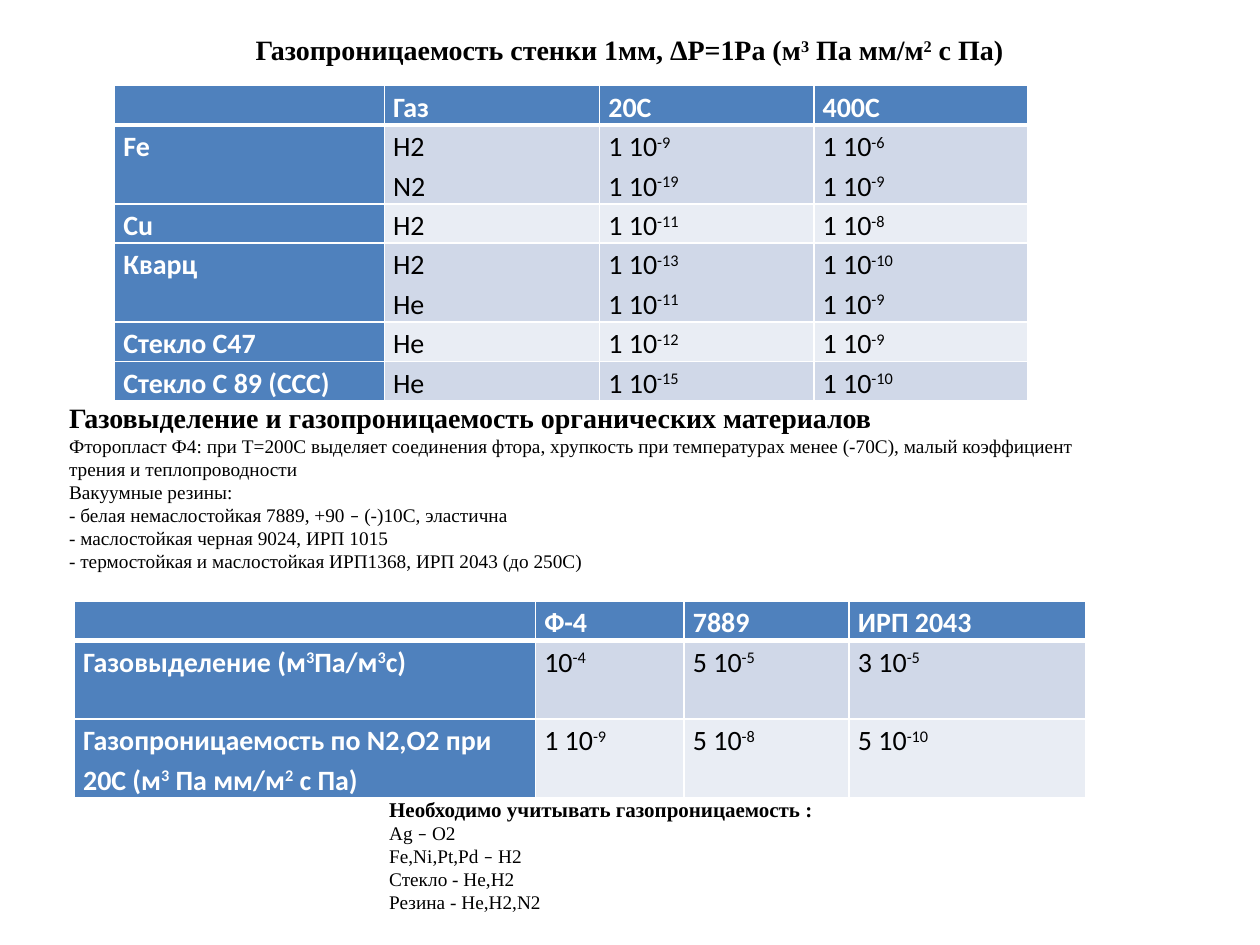
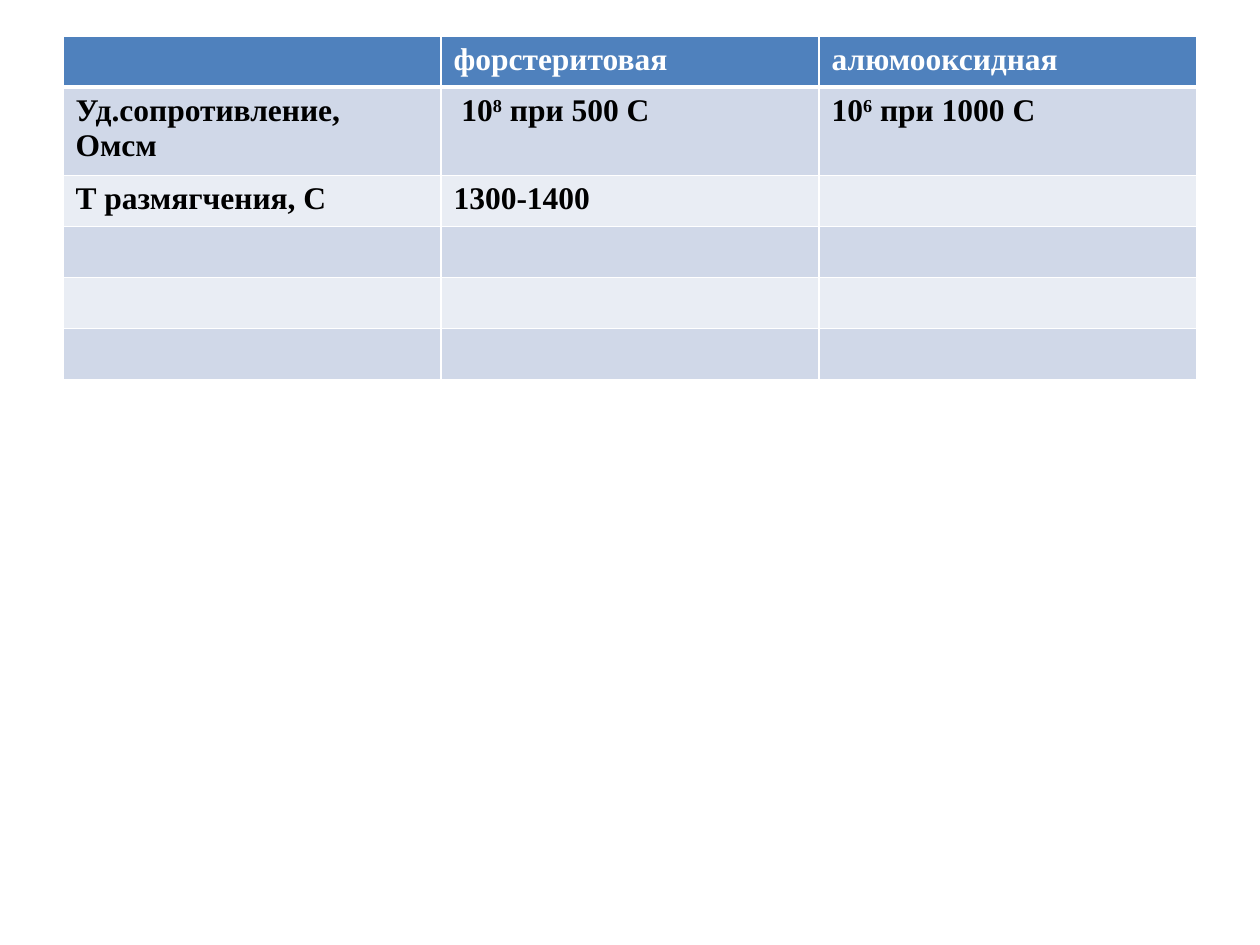
from lxml.etree import SubElement
from pptx import Presentation
from pptx.dml.color import RGBColor
from pptx.enum.text import MSO_ANCHOR, PP_ALIGN
from pptx.oxml.ns import qn
from pptx.util import Inches, Pt

# Shared look
HEADER, ODD_BAND, EVEN_BAND = "4F81BD", "D0D8E8", "E9EDF4"
WHITE, BLACK = "FFFFFF", "000000"
SERIF, SANS = "Times New Roman", "Calibri"

# Grid: 100 columns by 75 rows on a 10 by 7.5 inch slide
COLUMNS, ROWS = 100, 75
SLIDE_WIDTH, SLIDE_HEIGHT = Inches(10), Inches(7.5)


def color(hex_string):
    return RGBColor.from_string(hex_string)


def across(columns):
    return round(SLIDE_WIDTH * columns / COLUMNS)


def down(rows):
    return round(SLIDE_HEIGHT * rows / ROWS)


def write_line(paragraph, line, size, face, ink, bold):
    """Text between carets is superscript; serif lines take a sans dash."""
    for index, part in enumerate(line.split("^")):
        before, dash, after = part.partition("–")
        for words, font_name in ((before, face), (dash, SANS), (after, face)):
            if not words:
                continue
            run = paragraph.add_run()
            run.text = words
            run.font.size, run.font.name = Pt(size), font_name
            run.font.bold, run.font.color.rgb = bold, color(ink)
            if index % 2:
                run.font._element.set("baseline", "30000")


def write_lines(frame, lines, spacing=None, **style):
    for index, line in enumerate(lines):
        paragraph = frame.paragraphs[0] if index == 0 else frame.add_paragraph()
        paragraph.alignment = PP_ALIGN.LEFT
        if spacing:
            paragraph.line_spacing = spacing
        write_line(paragraph, line, **style)


def border_cell(cell, row):
    """White rules all round, with a thick one under the header."""
    properties = cell._tc.get_or_add_tcPr()
    widths = {"L": 1, "R": 1, "T": 3 if row == 1 else 1, "B": 3 if row == 0 else 1}
    for side, width in widths.items():
        rule = SubElement(properties, qn(f"a:ln{side}"), w=str(Pt(width)))
        SubElement(SubElement(rule, qn("a:solidFill")), qn("a:srgbClr"), val=WHITE)


def banded_table(slide, box, widths, heights, content, face, size,
                 header_column=False, bold_body=False, margins=None, spacing=None):
    left, top = box
    table = slide.shapes.add_table(
        len(heights), len(widths), across(left), down(top),
        across(sum(widths)), down(sum(heights))).table
    table.first_row = table.horz_banding = False
    for column, width in zip(table.columns, widths):
        column.width = across(width)
    for row, height in zip(table.rows, heights):
        row.height = down(height)

    for r, row in enumerate(content):
        for c, text in enumerate(row):
            cell = table.cell(r, c)
            heading = r == 0 or (header_column and c == 0)
            border_cell(cell, r)
            cell.fill.solid()
            band = ODD_BAND if r % 2 else EVEN_BAND
            cell.fill.fore_color.rgb = color(HEADER if heading else band)
            if margins:
                side, edge = margins
                cell.margin_left = cell.margin_right = across(side)
                cell.margin_top = cell.margin_bottom = down(edge)
            write_lines(cell.text_frame, text.split("\n"), spacing, size=size,
                        face=face, ink=WHITE if heading else BLACK,
                        bold=heading or bold_body)


def text_block(slide, box, heading, heading_size, lines=(), anchor=MSO_ANCHOR.MIDDLE):
    left, top, width, height = box
    frame = slide.shapes.add_textbox(
        across(left), down(top), across(width), down(height)).text_frame
    frame.word_wrap = True
    frame.vertical_anchor = anchor
    write_lines(frame, [heading], size=heading_size, face=SERIF, ink=BLACK, bold=True)
    for line in lines:
        write_line(frame.add_paragraph(), line, 11, SERIF, BLACK, False)


def permeability_slide(slide):
    compact = dict(face=SANS, size=16, header_column=True, margins=(0.7, 0), spacing=1.15)
    line = 3.12

    # Permeability of inorganic walls
    walls = [
        ("", "Газ", "20С", "400С"),
        ("Fe", "H2\nN2", "1 10^-9^\n1 10^-19^", "1 10^-6^\n1 10^-9^"),
        ("Cu", "H2", "1 10^-11^", "1 10^-8^"),
        ("Кварц", "H2\nHe", "1 10^-13^\n1 10^-11^", "1 10^-10^\n1 10^-9^"),
        ("Стекло С47", "He", "1 10^-12^", "1 10^-9^"),
        ("Стекло С 89 (ССС)", "He", "1 10^-15^", "1 10^-10^"),
    ]
    banded_table(slide, (9.1, 6.8), (21.4, 17.1, 17, 17),
                 [line * n for n in (1, 2, 1, 2, 1, 1)], walls, **compact)
    text_block(slide, (19.3, 2.1, 62.2, 3.7),
               "Газопроницаемость стенки 1мм, ΔP=1Pа (м^3^ Па мм/м^2^ с Па)", 16)

    # Organic materials
    organics = [
        ("", "Ф-4", "7889", "ИРП 2043"),
        ("Газовыделение (м^3^Па/м^3^с)", "10^-4^", "5 10^-5^", "3 10^-5^"),
        ("Газопроницаемость по N2,O2 при 20С (м^3^ Па мм/м^2^ с Па)",
         "1 10^-9^", "5 10^-8^", "5 10^-10^"),
    ]
    banded_table(slide, (5.9, 47.7), (36.6, 11.8, 13.1, 18.8),
                 [line * n for n in (1, 2, 2)], organics, **compact)
    text_block(slide, (4.5, 31.2, 85, 14.8),
               "Газовыделение и газопроницаемость органических материалов", 16, [
                   "Фторопласт Ф4: при Т=200С выделяет соединения фтора, хрупкость при "
                   "температурах менее (-70С), малый коэффициент трения и теплопроводности",
                   "Вакуумные резины:",
                   "- белая немаслостойкая 7889, +90 – (-)10С, эластична",
                   "- маслостойкая черная 9024, ИРП 1015",
                   "- термостойкая и маслостойкая ИРП1368, ИРП 2043 (до 250С)",
               ])

    # Gas and material pairs to watch
    text_block(slide, (29.9, 62.7, 39.8, 10.4),
               "Необходимо учитывать газопроницаемость :", 12,
               ["Ag – O2", "Fe,Ni,Pt,Pd – H2", "Стекло - He,H2", "Резина - He,H2,N2"],
               MSO_ANCHOR.TOP)


def ceramics_slide(slide):
    # Ceramics comparison, with rows left to fill in
    ceramics = [
        ("", "форстеритовая", "алюмооксидная"),
        ("Уд.сопротивление, Омсм", " 10^8^ при 500 С", "10^6^ при 1000 С"),
        ("Т размягчения, С", "1300-1400", ""),
    ] + [("", "", "")] * 3
    banded_table(slide, (5, 2.9), [30] * 3, [4, 6.4] + [4.06] * 4, ceramics,
                 face=SERIF, size=18, bold_body=True)


def main():
    deck = Presentation()
    deck.slide_width, deck.slide_height = SLIDE_WIDTH, SLIDE_HEIGHT
    for build in (permeability_slide, ceramics_slide):
        build(deck.slides.add_slide(deck.slide_layouts[6]))
    deck.save("out.pptx")


if __name__ == "__main__":
    main()
